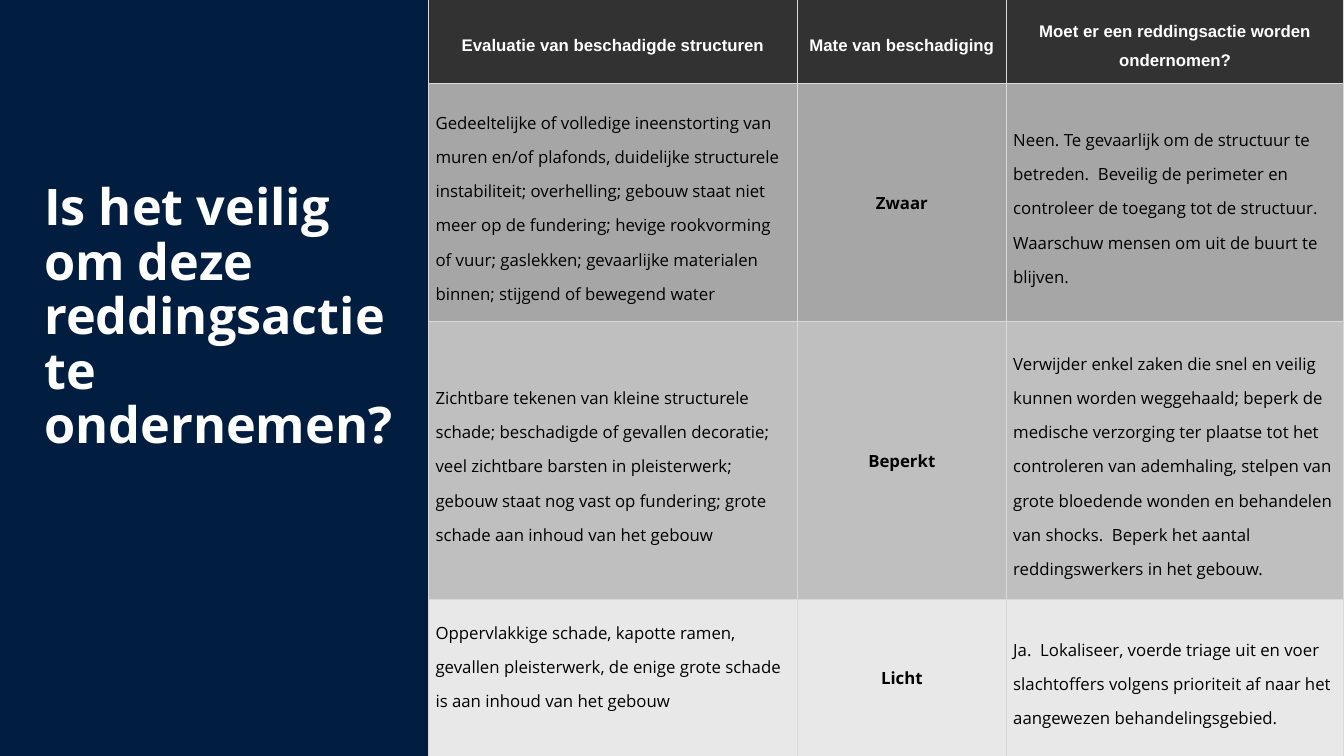
import lxml.etree
import pptx
import pptx.dml.color
import pptx.enum.shapes
import pptx.enum.text
import pptx.oxml.ns
import pptx.util

NAVY, WHITE, BLACK = "011E41", "FFFFFF", "000000"
HEADER_FILL, BORDER = "323232", "D9D9D9"
MIDDLE = pptx.enum.text.MSO_ANCHOR.MIDDLE
LEFT, CENTER = pptx.enum.text.PP_ALIGN.LEFT, pptx.enum.text.PP_ALIGN.CENTER

HEADINGS = (
    "Evaluatie van beschadigde structuren",
    "Mate van beschadiging",
    "Moet er een reddingsactie worden ondernomen?",
)
DAMAGE_LEVELS = (
    (
        "A6A6A6",
        "Gedeeltelijke of volledige ineenstorting van muren en/of plafonds, duidelijke structurele "
        "instabiliteit; overhelling; gebouw staat niet meer op de fundering; hevige rookvorming of vuur; "
        "gaslekken; gevaarlijke materialen binnen; stijgend of bewegend water",
        "Zwaar",
        "Neen. Te gevaarlijk om de structuur te betreden.  Beveilig de perimeter en controleer de toegang "
        "tot de structuur. Waarschuw mensen om uit de buurt te blijven.",
    ),
    (
        "BFBFBF",
        "Zichtbare tekenen van kleine structurele schade; beschadigde of gevallen decoratie; veel zichtbare "
        "barsten in pleisterwerk; gebouw staat nog vast op fundering; grote schade aan inhoud van het gebouw",
        "Beperkt",
        "Verwijder enkel zaken die snel en veilig kunnen worden weggehaald; beperk de medische verzorging "
        "ter plaatse tot het controleren van ademhaling, stelpen van grote bloedende wonden en behandelen "
        "van shocks.  Beperk het aantal reddingswerkers in het gebouw.",
    ),
    (
        "E8E8E8",
        "Oppervlakkige schade, kapotte ramen, gevallen pleisterwerk, de enige grote schade is aan inhoud "
        "van het gebouw",
        "Licht",
        "Ja.  Lokaliseer, voerde triage uit en voer slachtoffers volgens prioriteit af naar het aangewezen "
        "behandelingsgebied.",
    ),
)


def px(length):
    return pptx.util.Emu(length * 9144)


def color(value):
    return pptx.dml.color.RGBColor.from_string(value)


class SlideBuilder:
    body_font = "Open Sans"
    header_font = "Arial"
    body_size = 12

    def __init__(self, page):
        self.page = page

    def set_text(self, frame, text, size, hue, font, bold, align, spacing):
        para = frame.paragraphs[0]
        para.text = text
        para.alignment = align
        para.line_spacing = spacing
        para.font.size = pptx.util.Pt(size)
        para.font.name = font
        para.font.bold = bold
        para.font.color.rgb = color(hue)

    def panel(self, left, top, width, height, fill):
        shape = self.page.shapes.add_shape(
            pptx.enum.shapes.MSO_SHAPE.RECTANGLE, px(left), px(top), px(width), px(height)
        )
        shape.shadow.inherit = False
        shape.fill.solid()
        shape.fill.fore_color.rgb = color(fill)
        shape.line.fill.background()

    def title(self, left, top, width, height, text):
        frame = self.page.shapes.add_textbox(px(left), px(top), px(width), px(height)).text_frame
        frame.word_wrap = True
        frame.vertical_anchor = MIDDLE
        self.set_text(frame, text, 36, WHITE, self.body_font, True, LEFT, 0.9)

    def table(self, left, top, widths, heights):
        table = self.page.shapes.add_table(
            len(heights), len(widths), px(left), px(top), px(sum(widths)), px(sum(heights))
        ).table
        table.first_row = table.horz_banding = False
        for column, width in zip(table.columns, widths):
            column.width = px(width)
        for row, height in zip(table.rows, heights):
            row.height = px(height)
        return table

    def cell(self, cell, text, fill, hue=BLACK, font=body_font, bold=False, align=LEFT, spacing=1.5):
        cell.margin_left = cell.margin_right = px(7)
        cell.margin_top = cell.margin_bottom = 0
        cell.vertical_anchor = MIDDLE
        self.borders(cell)
        cell.fill.solid()
        cell.fill.fore_color.rgb = color(fill)
        self.set_text(cell.text_frame, text, self.body_size, hue, font, bold, align, spacing)

    def borders(self, cell):
        qn = pptx.oxml.ns.qn
        properties = cell._tc.get_or_add_tcPr()
        for side in ("a:lnL", "a:lnR", "a:lnT", "a:lnB"):
            line = lxml.etree.SubElement(properties, qn(side), w=str(pptx.util.Pt(1)))
            paint = lxml.etree.SubElement(line, qn("a:solidFill"))
            lxml.etree.SubElement(paint, qn("a:srgbClr"), val=BORDER)


def main():
    deck = pptx.Presentation()
    deck.slide_width, deck.slide_height = px(1333), px(750)
    builder = SlideBuilder(deck.slides.add_slide(deck.slide_layouts[6]))

    builder.panel(-2, -1, 427, 751, NAVY)
    builder.title(34, 70, 373, 492, "Is het veilig om deze reddingsactie te ondernemen?")

    table = builder.table(425, -1, (366, 207, 335), (84, 236, 276, 156))
    for column, heading in enumerate(HEADINGS):
        builder.cell(
            table.cell(0, column), heading, HEADER_FILL, WHITE, builder.header_font, bold=True, align=CENTER
        )
    for row, (fill, signs, level, action) in enumerate(DAMAGE_LEVELS, start=1):
        builder.cell(table.cell(row, 0), signs, fill)
        builder.cell(table.cell(row, 1), level, fill, bold=True, align=CENTER, spacing=1.0)
        builder.cell(table.cell(row, 2), action, fill)
    table.cell(3, 0).margin_bottom = px(34)

    deck.save("out.pptx")


if __name__ == "__main__":
    main()
